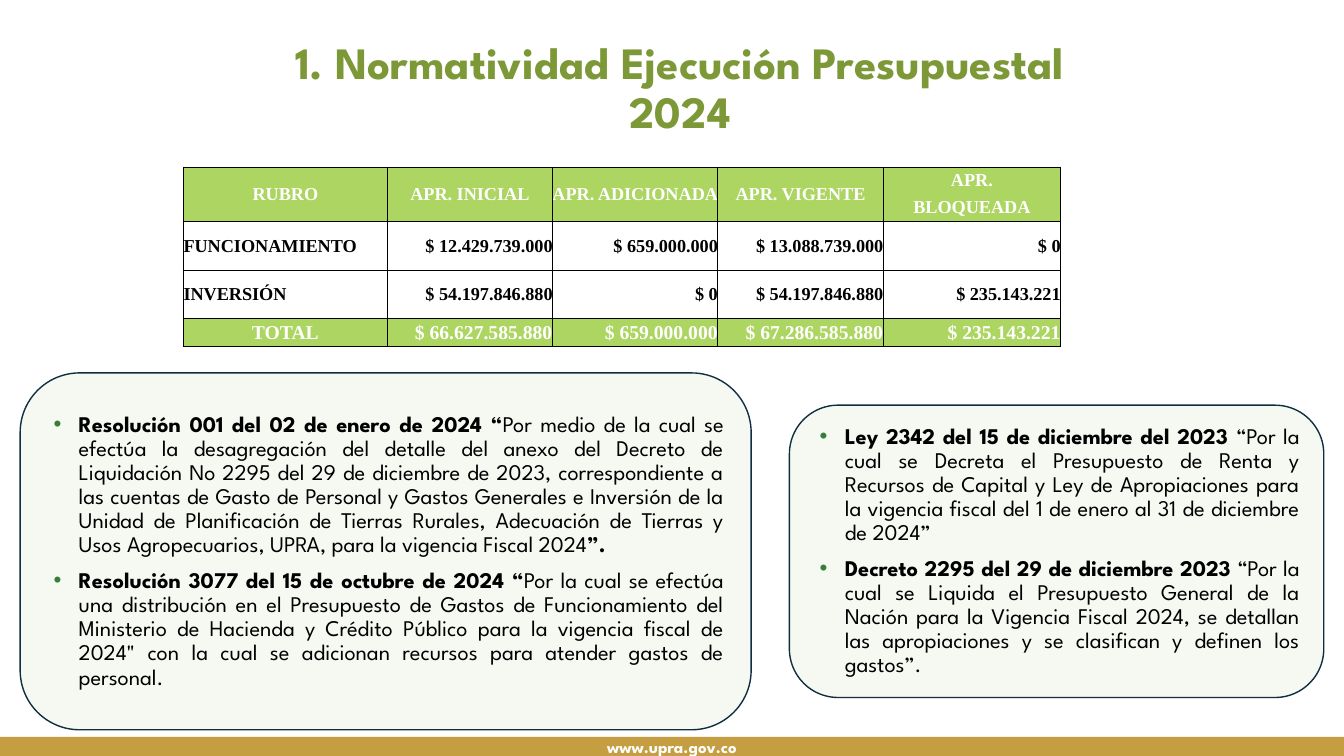
from lxml import etree
from pptx import Presentation
from pptx.dml.color import RGBColor
from pptx.enum.shapes import MSO_SHAPE
from pptx.enum.text import MSO_ANCHOR, PP_ALIGN
from pptx.oxml.ns import qn
from pptx.util import Inches, Pt

RECT, ROUND = MSO_SHAPE.RECTANGLE, MSO_SHAPE.ROUNDED_RECTANGLE
TOP, MIDDLE = MSO_ANCHOR.TOP, MSO_ANCHOR.MIDDLE
LEFT, CENTER, RIGHT, JUSTIFY = (
    PP_ALIGN.LEFT, PP_ALIGN.CENTER, PP_ALIGN.RIGHT, PP_ALIGN.JUSTIFY)

TITLE = "1. Normatividad Ejecución Presupuestal 2024"
SITE = "www.upra.gov.co"

# Each paragraph is a list of (text, bold) runs.
LAWS = [
    [("Ley 2342 del 15 de diciembre del 2023 ", True),
     ("“Por la cual se Decreta el Presupuesto de Renta y Recursos de Capital "
      "y Ley de Apropiaciones para la vigencia fiscal del 1 de enero al 31 de "
      "diciembre de 2024”", False)],
    [("Decreto 2295 del 29 de diciembre 2023", True),
     (" “Por la cual se Liquida el Presupuesto General de la Nación para la "
      "Vigencia Fiscal 2024, se detallan las apropiaciones y se clasifican y "
      "definen los gastos”.", False)],
]
RULINGS = [
    [("Resolución 001 del 02 de enero de 2024 “", True),
     ("Por medio de la cual se efectúa la desagregación del detalle del anexo "
      "del Decreto de Liquidación No 2295 del 29 de diciembre de 2023, "
      "correspondiente a las cuentas de Gasto de Personal y Gastos Generales "
      "e Inversión de la Unidad de Planificación de Tierras Rurales, "
      "Adecuación de Tierras y Usos Agropecuarios, UPRA, para la vigencia "
      "Fiscal 2024", False),
     ("”.", True)],
    [("Resolución 3077 del 15 de octubre de 2024 “", True),
     ("Por la cual se efectúa una distribución en el Presupuesto de Gastos de "
      "Funcionamiento del Ministerio de Hacienda y Crédito Público para la "
      "vigencia fiscal de 2024\" con la cual se adicionan recursos para "
      "atender gastos de personal.", False)],
]
PANELS = [
    ((7.83, 4.02, 5.3, 2.9), LAWS),
    ((0.2, 3.7, 7.25, 3.54), RULINGS),
]

BUDGET = [
    ["RUBRO", "APR. INICIAL", "APR. ADICIONADA", "APR. VIGENTE", "APR."],
    ["", "", "", "", "BLOQUEADA"],
    ["FUNCIONAMIENTO", "$ 12.429.739.000", "$ 659.000.000",
     "$ 13.088.739.000", "$ 0"],
    ["INVERSIÓN", "$ 54.197.846.880", "$ 0", "$ 54.197.846.880",
     "$ 235.143.221"],
    ["TOTAL", "$ 66.627.585.880", "$ 659.000.000", "$ 67.286.585.880",
     "$ 235.143.221"],
]
COLS = [2.02, 1.64, 1.64, 1.64, 1.76]
ROWS = [0.26, 0.28, 0.48, 0.48, 0.28]
HEADS, TOTAL, LAST = 2, len(ROWS) - 1, len(COLS) - 1

THEME = {
    "font": "League Spartan", "serif": "Times New Roman",
    "title": "7D9837", "footer": "C59E41", "panel": "E2F0D9",
    "edge": "0F2F41", "bullet": "397C3C", "head": "ACD561",
    "ink": "000000", "paper": "FFFFFF",
    "title_pt": 32, "body_pt": 16, "cell_pt": 13, "total_pt": 14,
    "site_pt": 12,
}


def rgb(name):
    return RGBColor.from_string(THEME[name])


def add(parent, tag, **attrs):
    return etree.SubElement(parent, qn(tag), attrs)


def write(frame, paras, size, color="ink", font="font", align=CENTER,
          anchor=MIDDLE, line=None, after=None, bullet=False):
    frame.word_wrap = True
    frame.vertical_anchor = anchor
    for i, runs in enumerate(paras):
        para = frame.add_paragraph() if i else frame.paragraphs[0]
        para.alignment = align
        if line:
            para.line_spacing = line
        if after:
            para.space_after = Pt(after)
        if bullet:
            props = para._p.get_or_add_pPr()
            props.set("marL", str(Inches(0.31)))
            props.set("indent", str(Inches(-0.25)))
            add(add(props, "a:buClr"), "a:srgbClr", val=THEME["bullet"])
            add(props, "a:buFont", typeface="Arial")
            add(props, "a:buChar", char="•")
        for text, bold in runs:
            run = para.add_run()
            run.text = text
            run.font.name = THEME[font]
            run.font.size = Pt(THEME[size])
            run.font.bold = bold
            run.font.color.rgb = rgb(color)


def draw(slide, kind, place, fill, edge=None, alpha=None):
    shape = slide.shapes.add_shape(kind, *map(Inches, place))
    shape.shadow.inherit = False
    shape.fill.solid()
    shape.fill.fore_color.rgb = rgb(fill)
    if alpha:
        tint = shape._element.spPr.find(qn("a:solidFill"))[0]
        add(tint, "a:alpha", val=str(alpha * 1000))
    if edge:
        shape.line.color.rgb = rgb(edge)
        shape.line.width = Pt(1)
    else:
        shape.line.fill.background()
    return shape


def border(cell, row, col):
    """Thin inner verticals on green rows; no rule inside the heading."""
    props = cell._tc.get_or_add_tcPr()
    green = row < HEADS or row == TOTAL
    sides = {
        "L": 0.5 if green and col > 0 else 1,
        "R": 0.5 if green and col < LAST else 1,
        "T": 0 if row == 1 else 1,
        "B": 0 if row == 0 and col == LAST else 1,
    }
    for side, width in sides.items():
        rule = add(props, "a:ln" + side, w=str(Pt(width)))
        if width:
            add(add(rule, "a:solidFill"), "a:srgbClr", val=THEME["ink"])
        else:
            add(rule, "a:noFill")


def add_budget(slide):
    table = slide.shapes.add_table(
        len(ROWS), len(COLS), Inches(1.82), Inches(1.66),
        Inches(sum(COLS)), Inches(sum(ROWS))).table
    table.first_row = table.horz_banding = False
    for col, width in zip(table.columns, COLS):
        col.width = Inches(width)
    for row, height in zip(table.rows, ROWS):
        row.height = Inches(height)
    for c in range(LAST):
        table.cell(0, c).merge(table.cell(1, c))
    for r, texts in enumerate(BUDGET):
        green = r < HEADS or r == TOTAL
        for c, text in enumerate(texts):
            cell = table.cell(r, c)
            cell.margin_left = cell.margin_right = 0
            cell.margin_top = cell.margin_bottom = 0
            border(cell, r, c)
            if green:
                cell.fill.solid()
                cell.fill.fore_color.rgb = rgb("head")
            else:
                cell.fill.background()
            if cell.is_spanned:
                continue
            if r < HEADS or (green and c == 0):
                align = CENTER
            else:
                align = RIGHT if c else LEFT
            write(cell.text_frame, [[(text, True)]],
                  "total_pt" if r == TOTAL else "cell_pt",
                  color="paper" if green else "ink", font="serif", align=align)
            cell.vertical_anchor = MIDDLE


def main():
    deck = Presentation()
    deck.slide_width, deck.slide_height = Inches(13.33), Inches(7.5)
    slide = deck.slides.add_slide(deck.slide_layouts[6])
    footer = draw(slide, RECT, (0, 7.31, 13.33, 0.19), "footer")
    write(footer.text_frame, [[(SITE, True)]], "site_pt", color="paper")
    title = slide.shapes.add_textbox(
        *map(Inches, (2.39, 0.36, 8.71, 1.64)))
    write(title.text_frame, [[(TITLE, True)]], "title_pt", color="title",
          anchor=TOP, line=0.9)
    for place, paras in PANELS:
        panel = draw(slide, ROUND, place, "panel", edge="edge", alpha=34)
        write(panel.text_frame, paras, "body_pt", align=JUSTIFY,
              line=0.9, after=8, bullet=True)
    add_budget(slide)
    deck.save("out.pptx")


if __name__ == "__main__":
    main()
